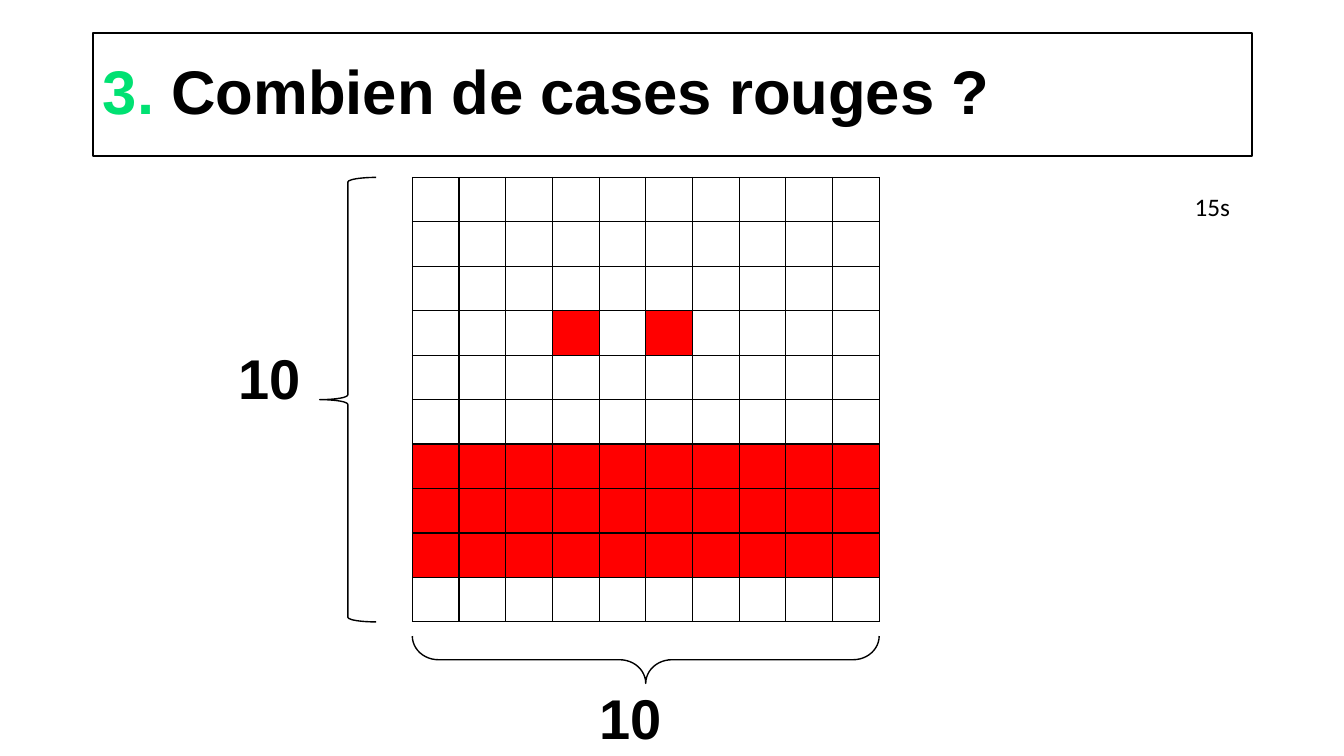
"""Build a quiz slide asking how many squares of a ten by ten grid are red."""
import pptx
import pptx.dml.color
import pptx.enum.shapes
import pptx.enum.text
import pptx.oxml
import pptx.oxml.ns
import pptx.util
from pptx.util import Inches

BLACK = pptx.dml.color.RGBColor(0x00, 0x00, 0x00)
GREEN = pptx.dml.color.RGBColor(0x00, 0xE1, 0x72)
RED = pptx.dml.color.RGBColor(0xFF, 0x00, 0x00)
GRID_SIZE = 10
RED_ROWS = range(6, 9)
RED_EYES = {(3, 3), (3, 5)}
BORDER_XML = (
    '<a:{side} {namespace} w="12700"><a:solidFill><a:srgbClr val="{color}"/>'
    "</a:solidFill></a:{side}>"
)


class QuizSlide:
    def __init__(self, presentation, font="Arial"):
        self.font = font
        self.slide = presentation.slides.add_slide(presentation.slide_layouts[5])

    def format_run(self, run, size, color=BLACK, bold=True, font=None):
        run.font.name = font or self.font
        run.font.size = pptx.util.Pt(size)
        run.font.bold = bold
        run.font.color.rgb = color

    def outline(self, shape, width):
        shape.line.color.rgb = BLACK
        shape.line.width = pptx.util.Pt(width)

    def title(self, number, question, left, top, width, height):
        shape = self.slide.shapes.title
        shape.left, shape.top = Inches(left), Inches(top)
        shape.width, shape.height = Inches(width), Inches(height)
        self.outline(shape, 1.5)
        shape.text_frame.vertical_anchor = pptx.enum.text.MSO_ANCHOR.MIDDLE
        paragraph = shape.text_frame.paragraphs[0]
        paragraph.alignment = pptx.enum.text.PP_ALIGN.LEFT
        paragraph.line_spacing = 0.9
        for text, color in ((number, GREEN), (question, BLACK)):
            run = paragraph.add_run()
            run.text = text
            self.format_run(run, 44, color)

    def text(self, text, left, top, width, height, size, shapes=None, **style):
        shapes = shapes or self.slide.shapes
        box = shapes.add_textbox(
            Inches(left), Inches(top), Inches(width), Inches(height))
        box.text_frame.word_wrap = False
        box.text_frame.text = text
        box.text_frame.auto_size = pptx.enum.text.MSO_AUTO_SIZE.SHAPE_TO_FIT_TEXT
        self.format_run(box.text_frame.paragraphs[0].runs[0], size, **style)

    def brace(self, label, brace_box, label_box, rotation=0, curve=0.083):
        shapes = self.slide.shapes.add_group_shape().shapes
        shape = shapes.add_shape(
            pptx.enum.shapes.MSO_SHAPE.LEFT_BRACE,
            *(Inches(length) for length in brace_box))
        shape.rotation = rotation
        shape.adjustments[0] = curve
        shape.shadow.inherit = False
        shape.fill.background()
        self.outline(shape, 1)
        self.text(label, *label_box, 40, shapes)

    def border(self, cell):
        properties = cell._tc.get_or_add_tcPr()
        for position, side in enumerate(("lnL", "lnR", "lnT", "lnB")):
            properties.insert(position, pptx.oxml.parse_xml(BORDER_XML.format(
                side=side, namespace=pptx.oxml.ns.nsdecls("a"), color=BLACK)))

    def grid(self, left, top, width, height):
        table = self.slide.shapes.add_table(
            GRID_SIZE, GRID_SIZE, Inches(left), Inches(top),
            Inches(width), Inches(height)).table
        table.first_row = table.horz_banding = False
        for row in range(GRID_SIZE):
            for column in range(GRID_SIZE):
                cell = table.cell(row, column)
                if row in RED_ROWS or (row, column) in RED_EYES:
                    cell.fill.solid()
                    cell.fill.fore_color.rgb = RED
                else:
                    cell.fill.background()
                self.border(cell)


def main():
    presentation = pptx.Presentation()
    presentation.slide_width = Inches(13.33)
    presentation.slide_height = Inches(7.5)
    quiz = QuizSlide(presentation)
    quiz.title("3. ", "Combien de cases rouges ?", 0.92, 0.33, 11.5, 1.22)
    quiz.brace("10", (3.17, 1.76, 0.56, 4.41), (2.27, 3.36, 0.83, 0.77))
    quiz.grid(4.09, 1.76, 4.63, 4.41)
    quiz.brace("10", (6.17, 4.23, 0.47, 4.63), (5.85, 6.73, 0.83, 0.77),
               rotation=270, curve=0.55)
    quiz.text("15s", 11.75, 1.85, 0.56, 0.4, 18, bold=False, font="Calibri")
    presentation.save("out.pptx")


if __name__ == "__main__":
    main()
